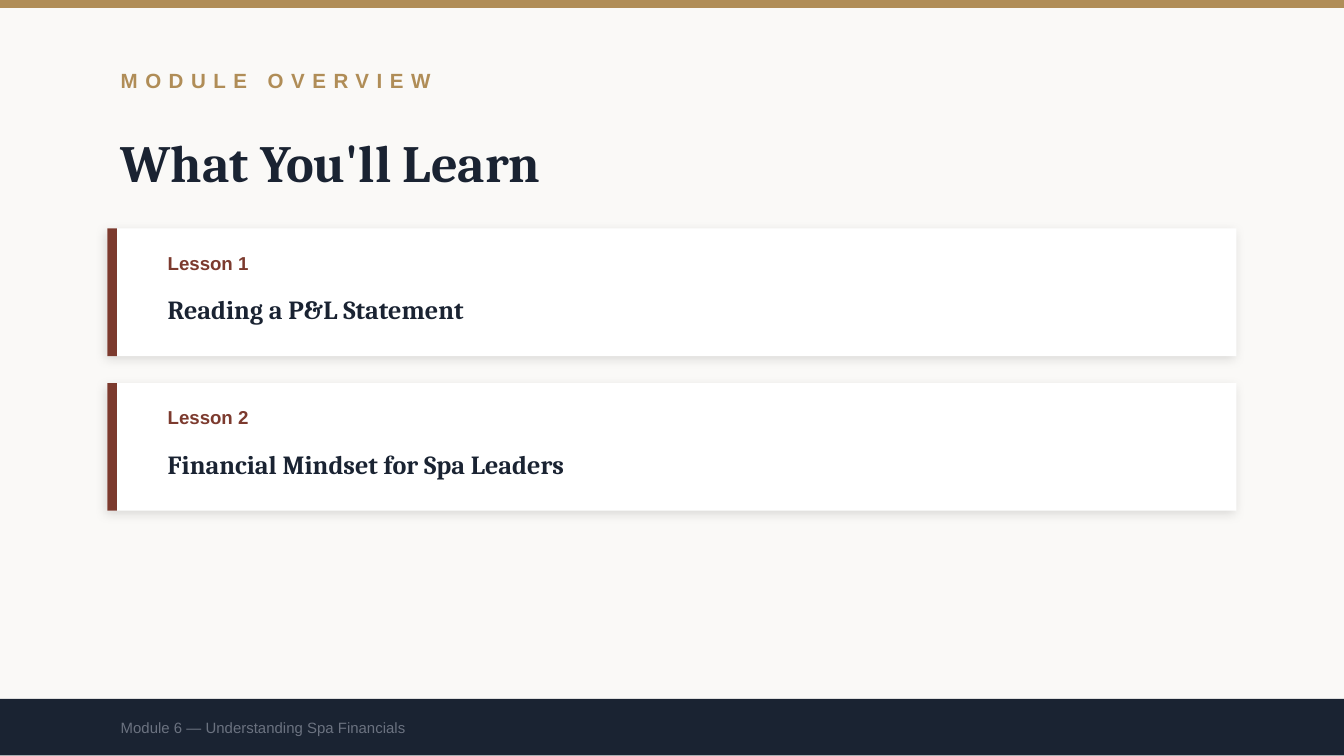
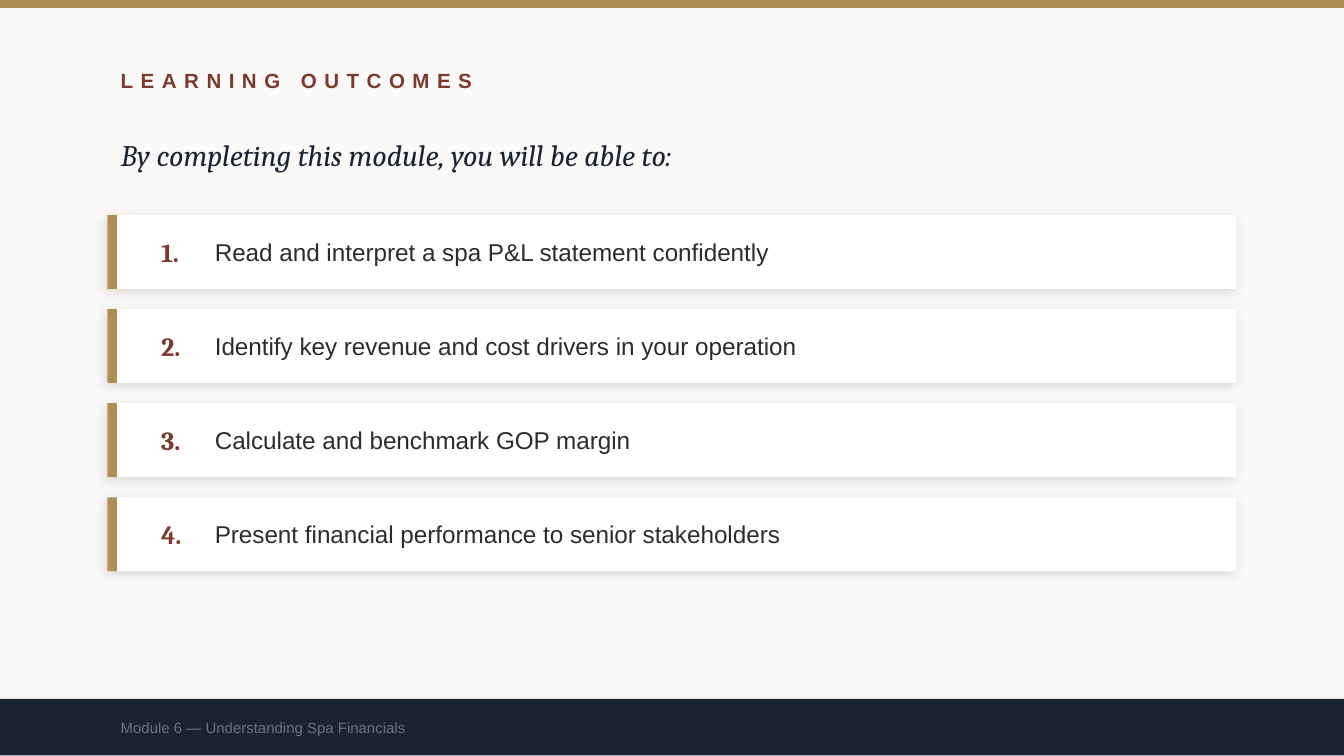
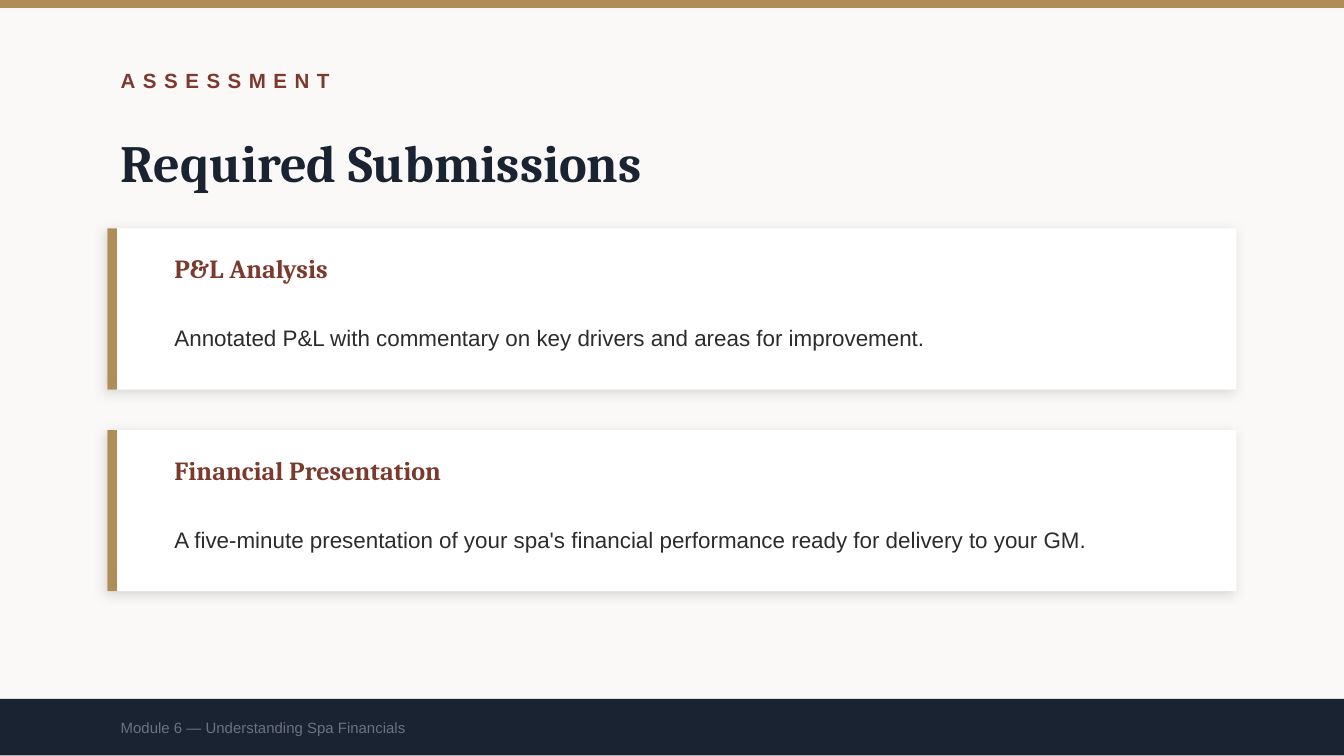
from lxml import etree
from pptx import Presentation
from pptx.dml.color import RGBColor
from pptx.enum.shapes import MSO_SHAPE
from pptx.enum.text import MSO_ANCHOR, MSO_AUTO_SIZE, PP_ALIGN
from pptx.oxml.ns import qn
from pptx.util import Pt

RECTANGLE = MSO_SHAPE.RECTANGLE
MIDDLE = MSO_ANCHOR.MIDDLE
NO_FIT = MSO_AUTO_SIZE.NONE
LEFT = PP_ALIGN.LEFT

PAPER, WHITE, NAVY = "FAF9F7", "FFFFFF", "1A2332"
GOLD, RUST, INK, GRAY = "B08D57", "7C3A2E", "2C2C2C", "6B7280"
SERIF, SANS = "Cambria", "Arial"

PAGE_WIDTH, PAGE_HEIGHT = 720, 405
MARGIN = 57.6
HEAD_WIDTH, CARD_WIDTH = 576, 604.8
STRIPE_WIDTH = 5.04
FOOTER_TOP, FOOTER_HEIGHT = 374.4, 30.24
FOOTER_TEXT = "Module 6 — Understanding Spa Financials"


def color(hex_value):
    return RGBColor.from_string(hex_value)


def fill_text(shape, text, size, ink, font=SANS, bold=False, italic=False,
              tracking=None, line_spacing=None):
    """Write one formatted paragraph, centred vertically in the shape."""
    frame = shape.text_frame
    frame.word_wrap = True
    frame.auto_size = NO_FIT
    frame.vertical_anchor = MIDDLE
    para = frame.paragraphs[0]
    para.alignment = LEFT
    para.line_spacing = line_spacing
    span = para.add_run()
    span.text = text
    span.font.name = font
    span.font.size = Pt(size)
    span.font.bold = bold
    span.font.italic = italic
    span.font.color.rgb = color(ink)
    if tracking:
        span.font._element.set("spc", str(tracking * 100))


def add_text(page, box, text, **style):
    shape = page.shapes.add_textbox(*map(Pt, box))
    fill_text(shape, text, **style)


def add_rectangle(page, box, fill):
    shape = page.shapes.add_shape(RECTANGLE, *map(Pt, box))
    shape.shadow.inherit = False
    shape.fill.solid()
    shape.fill.fore_color.rgb = color(fill)
    shape.line.fill.background()
    return shape


def add_soft_shadow(shape):
    effects = shape._element.spPr.find(qn("a:effectLst"))
    shadow = etree.SubElement(
        effects, qn("a:outerShdw"), blurRad=str(Pt(6)), dist=str(Pt(2)),
        dir=str(135 * 60000), algn="bl", rotWithShape="0")
    tint = etree.SubElement(shadow, qn("a:srgbClr"), val="000000")
    etree.SubElement(tint, qn("a:alpha"), val="12000")


def add_card(page, box, accent):
    left, top, _, height = box
    add_soft_shadow(add_rectangle(page, box, WHITE))
    add_rectangle(page, (left, top, STRIPE_WIDTH, height), accent)


def stack(top, height, gap, count):
    """Return the boxes of equal cards placed below each other."""
    return [(MARGIN, top + i * (height + gap), CARD_WIDTH, height)
            for i in range(count)]


def add_footer(page):
    add_rectangle(page, (0, FOOTER_TOP, PAGE_WIDTH, FOOTER_HEIGHT), NAVY)
    add_text(page, (MARGIN, FOOTER_TOP, HEAD_WIDTH, FOOTER_HEIGHT),
             FOOTER_TEXT, size=8, ink=GRAY)


def add_page(deck, label, label_ink, title, title_height=43.2, **title_style):
    """Add a page with its top band, label, title and footer."""
    page = deck.slides.add_slide(deck.slide_layouts.get_by_name("Title Only"))
    add_rectangle(page, (0, 0, PAGE_WIDTH, 4.32), GOLD)
    add_text(page, (MARGIN, 28.8, HEAD_WIDTH, 28.8), label,
             size=11, ink=label_ink, bold=True, tracking=4)
    heading = page.shapes.title
    heading.left, heading.top = Pt(MARGIN), Pt(64.8)
    heading.width, heading.height = Pt(HEAD_WIDTH), Pt(title_height)
    style = {"size": 28, "bold": True} | title_style
    fill_text(heading, title, ink=NAVY, font=SERIF, **style)
    add_footer(page)
    return page


def add_lesson(page, box, label, name):
    left, top = box[:2]
    add_card(page, box, RUST)
    add_text(page, (left + 25.2, top + 5.76, 504, 25.2), label,
             size=10, ink=RUST, bold=True)
    add_text(page, (left + 25.2, top + 28.8, 561.6, 28.8), name,
             size=14, ink=NAVY, font=SERIF, bold=True)


def add_outcome(page, box, number, outcome):
    left, top, _, height = box
    add_card(page, box, GOLD)
    add_text(page, (left + 21.6, top, 28.8, height), f"{number}.",
             size=14, ink=RUST, font=SERIF, bold=True)
    add_text(page, (left + 50.4, top, 532.8, height), outcome,
             size=13, ink=INK)


def add_submission(page, box, name, details):
    left, top = box[:2]
    add_card(page, box, GOLD)
    add_text(page, (left + 28.8, top + 8.64, 554.4, 25.2), name,
             size=14, ink=RUST, font=SERIF, bold=True)
    add_text(page, (left + 28.8, top + 36, 554.4, 39.6), details,
             size=12, ink=INK, line_spacing=1.4)


def build_overview(deck):
    page = add_page(deck, "MODULE OVERVIEW", GOLD, "What You'll Learn")
    lessons = ["Reading a P&L Statement", "Financial Mindset for Spa Leaders"]
    boxes = stack(122.4, 68.4, 14.4, len(lessons))
    for number, (box, name) in enumerate(zip(boxes, lessons), 1):
        add_lesson(page, box, f"Lesson {number}", name)


def build_outcomes(deck):
    page = add_page(deck, "LEARNING OUTCOMES", RUST,
                    "By completing this module, you will be able to:",
                    title_height=36, size=16, bold=False, italic=True)
    outcomes = [
        "Read and interpret a spa P&L statement confidently",
        "Identify key revenue and cost drivers in your operation",
        "Calculate and benchmark GOP margin",
        "Present financial performance to senior stakeholders",
    ]
    boxes = stack(115.2, 39.6, 10.8, len(outcomes))
    for number, (box, outcome) in enumerate(zip(boxes, outcomes), 1):
        add_outcome(page, box, number, outcome)


def build_assessment(deck):
    page = add_page(deck, "ASSESSMENT", RUST, "Required Submissions")
    submissions = [
        ("P&L Analysis",
         "Annotated P&L with commentary on key drivers and areas for "
         "improvement."),
        ("Financial Presentation",
         "A five-minute presentation of your spa's financial performance "
         "ready for delivery to your GM."),
    ]
    boxes = stack(122.4, 86.4, 21.6, len(submissions))
    for box, (name, details) in zip(boxes, submissions):
        add_submission(page, box, name, details)


def main():
    deck = Presentation()
    deck.slide_width, deck.slide_height = Pt(PAGE_WIDTH), Pt(PAGE_HEIGHT)
    backdrop = deck.slide_master.background.fill
    backdrop.solid()
    backdrop.fore_color.rgb = color(PAPER)
    build_overview(deck)
    build_outcomes(deck)
    build_assessment(deck)
    deck.save("out.pptx")


if __name__ == "__main__":
    main()
